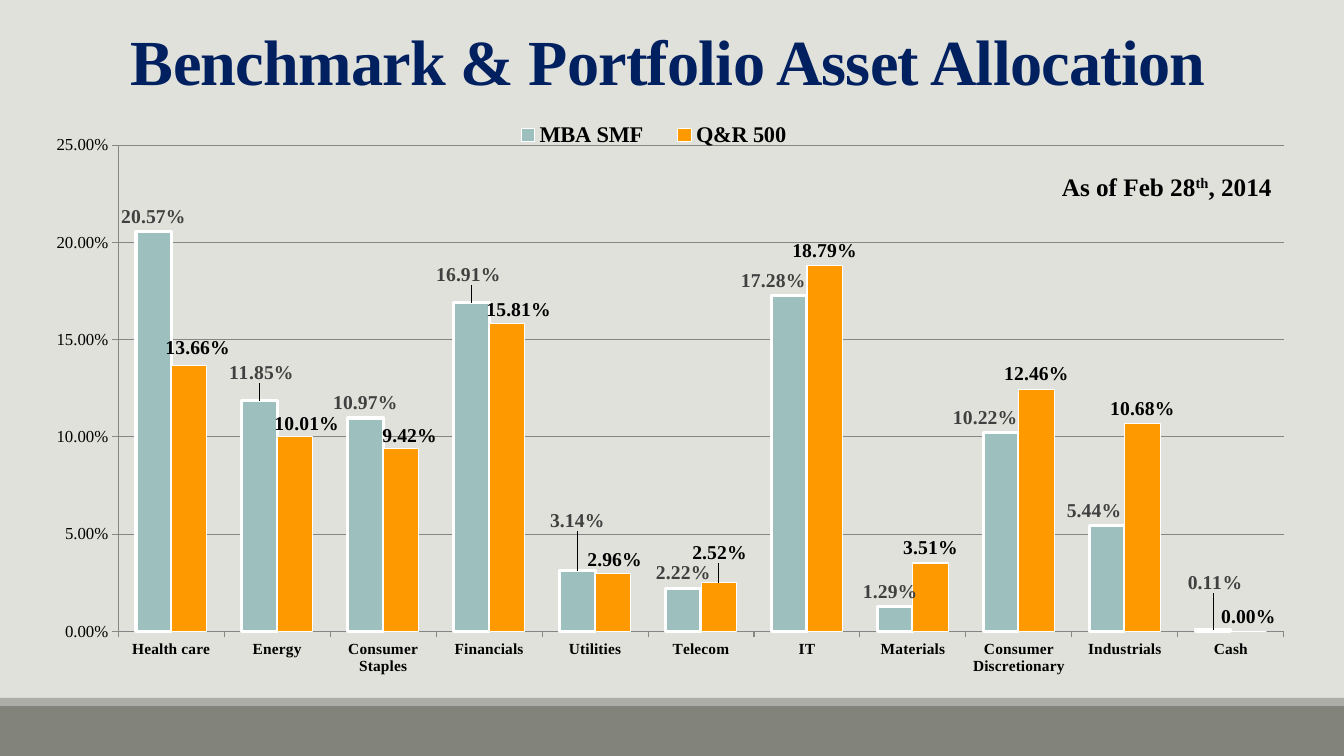
"""Build the asset allocation slide: a clustered column chart with a title and a date."""
from lxml import etree
from pptx import Presentation
from pptx import util as u
from pptx.chart.data import CategoryChartData
from pptx.dml.color import RGBColor
from pptx.enum import chart as ch, shapes, text
from pptx.oxml import ns

TITLE = "Benchmark & Portfolio Asset Allocation"
DATE = [("As of Feb 28", None), ("th", "30000"), (", 2014", None)]
SECTORS = ["Health care", "Energy", "Consumer Staples", "Financials", "Utilities", "Telecom",
           "IT", "Materials", "Consumer Discretionary", "Industrials", "Cash"]
FUNDS = [
    {"name": "MBA SMF", "fill": "teal", "label": "gray", "line": 2.25,
     "vals": [.2057, .1185, .1097, .1691, .0314, .0222, .1728, .0129, .1022, .0544, .0011],
     "shift": {1: (2, -13), 3: (-3, -13), 4: (0, -35), 6: (-16, 0), 7: (-5, 0),
               8: (-16, 0), 9: (-13, 0), 10: (2, -32)}},
    {"name": "Q&R 500", "fill": "orange", "label": "black", "line": 0.75,
     "vals": [.1366, .1001, .0942, .1581, .0296, .0252, .1879, .0351, .1246, .1068, 0],
     "shift": {0: (9, -3), 1: (12, 2), 2: (9, 3), 3: (12, 1), 4: (2, 1), 5: (1, -15)}},
]
BANDS = [(706, 50, "dark"), (698, 8, "light")]
HUES = {"back": "E1E1DB", "dark": "82847C", "light": "ACADA8", "navy": "002060",
        "black": "000000", "gray": "404040", "grid": "868686", "white": "FFFFFF",
        "teal": "9DBFBE", "orange": "FF9900"}
FACE = "Times New Roman"
PCT = "0.00%"
WIDE, HIGH = 1344, 756
CHART = (34, 115, 1278, 570)


def px(n):
    return u.Emu(round(n * 914400 / 100.8))


def hue(name):
    return RGBColor.from_string(HUES[name])


def style(font, size, bold, color="black"):
    font.name, font.size, font.bold = FACE, u.Pt(size), bold
    font.color.rgb = hue(color)


def paint(fill, color):
    fill.solid()
    fill.fore_color.rgb = hue(color)


def layout(after, **parts):
    node = after.getnext()
    if node is None or node.tag != ns.qn("c:layout"):
        node = etree.Element(ns.qn("c:layout"))
        after.addnext(node)
    for kid in list(node):
        node.remove(kid)
    man = etree.SubElement(node, ns.qn("c:manualLayout"))
    for key, val in parts.items():
        etree.SubElement(man, ns.qn("c:" + key)).set("val", str(val))


def add_text(slide, box, runs, size, color, wrap):
    frame = slide.shapes.add_textbox(*map(px, box)).text_frame
    frame.word_wrap = wrap
    para = frame.paragraphs[0]
    for words, base in runs:
        run = para.add_run()
        run.text = words
        style(run.font, size, True, color)
        if base:
            run.font._element.set("baseline", base)
    return frame


def add_bars(slide):
    data = CategoryChartData(number_format=PCT)
    data.categories = SECTORS
    for fund in FUNDS:
        data.add_series(fund["name"], fund["vals"])
    kind = ch.XL_CHART_TYPE.COLUMN_CLUSTERED
    chart = slide.shapes.add_chart(kind, *map(px, CHART), data).chart
    chart.has_title = False
    style(chart.font, 10, False)

    plot = chart.plots[0]
    plot.gap_width, plot.overlap, plot.vary_by_categories = 100, 0, False
    for ser, fund in zip(plot.series, FUNDS):
        paint(ser.format.fill, fund["fill"])
        ser.format.line.color.rgb = hue("white")
        ser.format.line.width = u.Pt(fund["line"])
        ser.invert_if_negative = False
        labels = ser.data_labels
        labels.show_value = True
        labels.number_format, labels.number_format_is_linked = PCT, False
        labels.position = ch.XL_LABEL_POSITION.OUTSIDE_END
        style(labels.font, 14, True, fund["label"])
        for i in fund["shift"]:
            label = ser.points[i].data_label
            style(label.font, 14, True, fund["label"])
            label.position = ch.XL_LABEL_POSITION.OUTSIDE_END
        for idx in ser._element.xpath("c:dLbls/c:dLbl/c:idx"):
            dx, dy = fund["shift"][int(idx.get("val"))]
            layout(idx, x=round(dx / CHART[2], 4), y=round(dy / CHART[3], 4))

    cat, val = chart.category_axis, chart.value_axis
    for axis, size, bold in ((cat, 11, True), (val, 12, False)):
        style(axis.tick_labels.font, size, bold)
        axis.format.line.color.rgb = hue("grid")
        axis.major_tick_mark = ch.XL_TICK_MARK.OUTSIDE
    val.minimum_scale, val.maximum_scale, val.major_unit = 0, .25, .05
    val.tick_labels.number_format = PCT
    val.tick_labels.number_format_is_linked = False
    val.major_gridlines.format.line.color.rgb = hue("grid")

    chart.has_legend = True
    key = chart.legend
    key.position, key.include_in_layout = ch.XL_LEGEND_POSITION.TOP, True
    style(key.font, 16, True)
    layout(key._element.find(ns.qn("c:legendPos")), xMode="edge", yMode="edge",
           x=.36, y=.01, w=.25, h=.05)
    area = chart._chartSpace.chart.plotArea
    mark = etree.Element("mark")
    area.insert(0, mark)
    layout(mark, layoutTarget="inner", xMode="edge", yMode="edge",
           x=.066, y=.053, w=.912, h=.853)
    area.remove(mark)


def main():
    deck = Presentation()
    deck.slide_width, deck.slide_height = px(WIDE), px(HIGH)
    slide = deck.slides.add_slide(deck.slide_layouts[6])
    paint(slide.background.fill, "back")
    for top, high, color in BANDS:
        band = slide.shapes.add_shape(shapes.MSO_SHAPE.RECTANGLE, 0, px(top), px(WIDE), px(high))
        band.shadow.inherit = False
        paint(band.fill, color)
        band.line.fill.background()
    add_bars(slide)
    head = add_text(slide, (121, 6, 1109, 96), [(TITLE, None)], 45.9, "navy", True)
    head.vertical_anchor = text.MSO_ANCHOR.BOTTOM
    head.paragraphs[0].line_spacing = .75
    head.paragraphs[0].runs[0].font._element.set("spc", "-50")
    date = add_text(slide, (1052, 166, 234, 40), DATE, 18, "black", False)
    date.auto_size = text.MSO_AUTO_SIZE.SHAPE_TO_FIT_TEXT
    deck.save("out.pptx")


if __name__ == "__main__":
    main()
